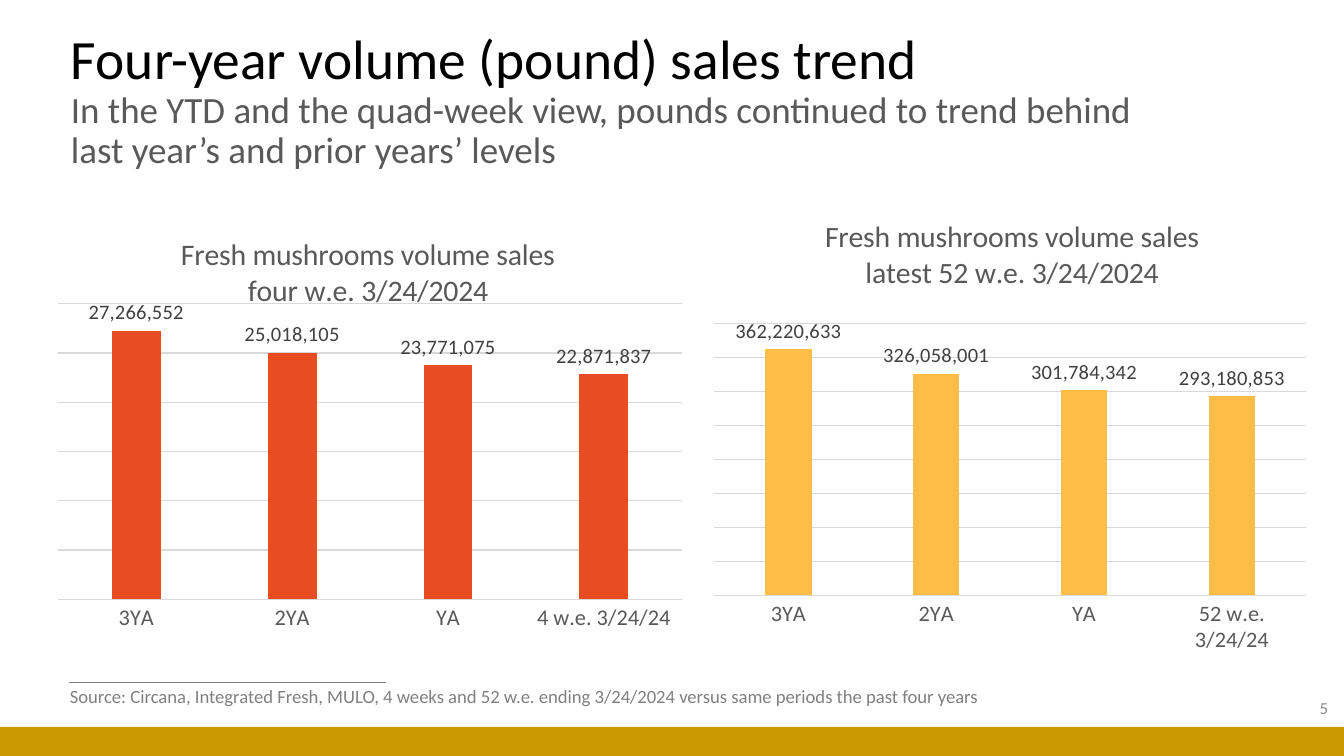
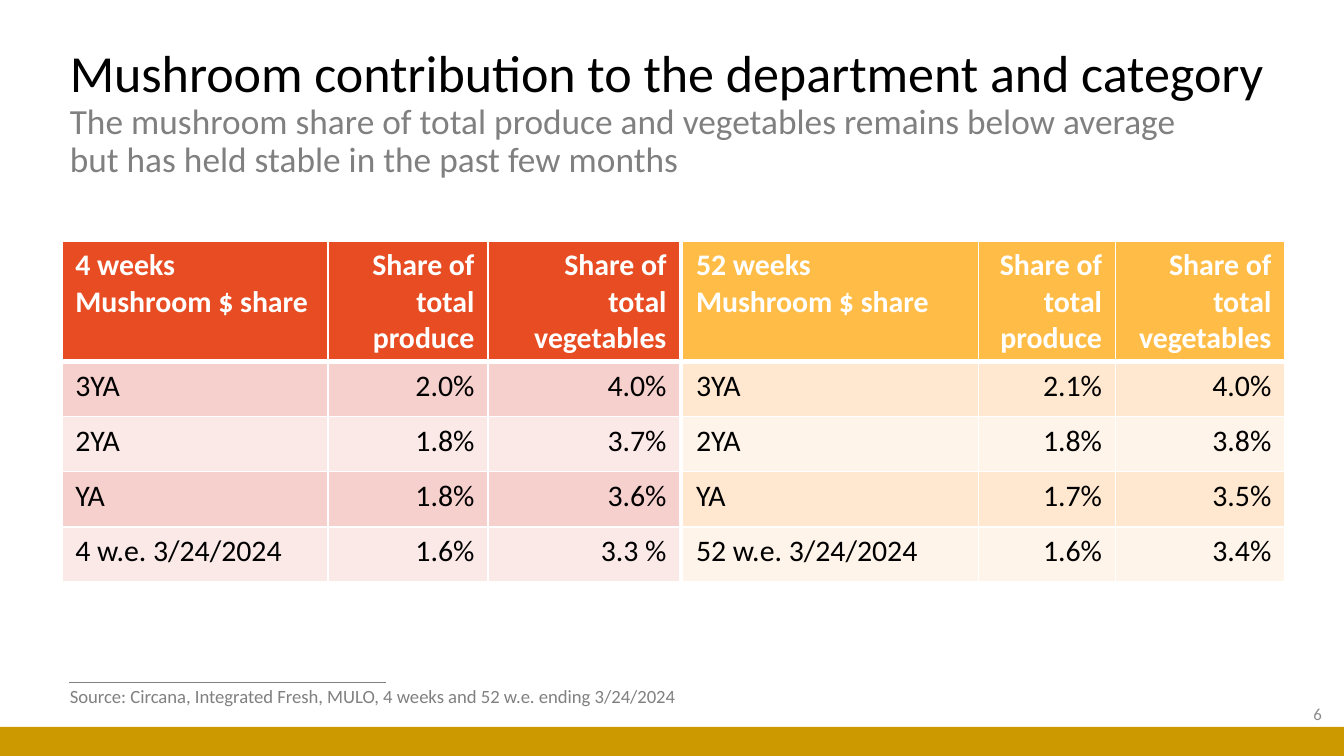
from lxml import etree
from pptx import Presentation
from pptx.chart.data import CategoryChartData as ChartData
from pptx.dml.color import RGBColor
from pptx.enum.chart import XL_CHART_TYPE as Kind, XL_LABEL_POSITION as Spot, XL_TICK_MARK as Tick
from pptx.enum.shapes import MSO_CONNECTOR as Link, MSO_SHAPE as Shape
from pptx.enum.text import MSO_ANCHOR as Anchor, MSO_AUTO_SIZE as Fit, PP_ALIGN as Align
from pptx.oxml.ns import qn
from pptx.util import Cm, Pt

FACE = "Calibri"
WHITE, BLACK, GRAY, DARK = "FFFFFF", "000000", "808080", "595959"
GOLD, GRID, FAINT, LABEL = "CC9900", "D9D9D9", "8C8C8C", "404040"
RED, AMBER = "E84C22", "FFBD47"


def rgb(code):
    return RGBColor.from_string(code)


def style(font, size, color, bold=False):
    font.name, font.size, font.bold = FACE, Pt(size), bold
    font.color.rgb = rgb(color)


def add_text(slide, box, text, size, color, wrap=True):
    """Add a one-paragraph text box and return its frame."""
    frame = slide.shapes.add_textbox(*map(Cm, box)).text_frame
    frame.word_wrap = wrap
    frame.text = text
    for run in frame.paragraphs[0].runs:
        style(run.font, size, color)
    return frame


def add_title(slide, box, head, sub, sizes, color):
    frame = add_text(slide, box, head + "\v" + sub, sizes[1], color)
    frame.vertical_anchor = Anchor.MIDDLE
    para = frame.paragraphs[0]
    para.line_spacing = 0.9
    style(para.runs[0].font, sizes[0], BLACK)


def add_frame(slide):
    """Add the source rule and the bottom band."""
    rule = slide.shapes.add_connector(Link.STRAIGHT, Cm(1.3), Cm(12.9), Cm(7.29), Cm(12.9))
    rule.line.color.rgb = rgb(GRAY)
    rule.line.width = Pt(0.5)
    etree.SubElement(rule._element.spPr, qn("a:effectLst"))
    band = slide.shapes.add_shape(Shape.RECTANGLE, 0, Cm(13.74), Cm(25.4), Cm(0.55))
    band.shadow.inherit = False
    band.fill.solid()
    band.fill.fore_color.rgb = rgb(GOLD)
    band.line.fill.background()


def add_notes(slide, source, width, number, spot):
    """Add the source line and the page number."""
    frame = add_text(slide, (1.07, 12.83, width, 0.69), source, 10, GRAY, wrap=False)
    frame.auto_size = Fit.SHAPE_TO_FIT_TEXT
    frame = add_text(slide, (*spot, 5.72, 0.76), number, 9, FAINT)
    frame.vertical_anchor = Anchor.MIDDLE
    frame.paragraphs[0].alignment = Align.RIGHT


def place(parent, index, **parts):
    """Give a chart part a manual layout."""
    old = parent.find(qn("c:layout"))
    if old is not None:
        parent.remove(old)
    layout = etree.Element(qn("c:layout"))
    manual = etree.SubElement(layout, qn("c:manualLayout"))
    for name, value in parts.items():
        etree.SubElement(manual, qn("c:" + name)).set("val", str(value))
    parent.insert(index, layout)


def set_axes(chart, top, step):
    cat, val = chart.category_axis, chart.value_axis
    cat.major_tick_mark = cat.minor_tick_mark = Tick.NONE
    style(cat.tick_labels.font, 12, DARK)
    val.minimum_scale, val.maximum_scale, val.major_unit = 0, top, step
    val.has_major_gridlines = True
    for line in (cat.format.line, val.major_gridlines.format.line):
        line.color.rgb = rgb(GRID)
        line.width = Pt(0.75)
    val.visible = False


def add_bars(slide, left, width, title, spot, plot, last, values, color, scale):
    data = ChartData(number_format="#,##0")
    data.categories = ["3YA", "2YA", "YA", last]
    data.add_series("Series 1", values)
    chart = slide.shapes.add_chart(
        Kind.COLUMN_CLUSTERED, Cm(left), Cm(3.94), Cm(width), Cm(8.41), data).chart
    style(chart.font, 10, BLACK)
    chart.has_legend = False
    chart.has_title = True
    frame = chart.chart_title.text_frame
    frame.text = title
    for para in frame.paragraphs:
        style(para.runs[0].font, 16, DARK)
    place(chart.chart_title._element, 1, xMode="edge", yMode="edge", x=spot[0], y=spot[1])
    place(chart._chartSpace.chart.plotArea, 0, layoutTarget="inner", xMode="edge",
          yMode="edge", x=0, y=plot[0], w=1, h=plot[1])
    set_axes(chart, *scale)
    bars = chart.plots[0]
    bars.gap_width, bars.overlap, bars.vary_by_categories = 219, -27, False
    fill = bars.series[0].format.fill
    fill.solid()
    fill.fore_color.rgb = rgb(color)
    bars.has_data_labels = True
    labels = bars.data_labels
    labels.show_value = True
    labels.position = Spot.OUTSIDE_END
    labels.number_format, labels.number_format_is_linked = "#,##0", False
    style(labels.font, 11, LABEL)


def set_edges(cell, top, bottom):
    """Draw white cell borders, with widths in points."""
    props = cell._tc.get_or_add_tcPr()
    for side, width in zip("LRTB", (1, 1, top, bottom)):
        line = etree.SubElement(props, qn("a:ln" + side), w=str(Pt(width)))
        fill = etree.SubElement(line, qn("a:solidFill"))
        etree.SubElement(fill, qn("a:srgbClr"), val=WHITE)


def add_grid(slide, left, widths, period, last, shares, fills):
    """Add a share table; fills are header, odd row and even row."""
    rows = [(period + "\vMushroom $ share", "Share of total produce", "Share of total vegetables")]
    rows += [(name, *pair) for name, pair in zip(("3YA", "2YA", "YA", last), shares)]
    high = Cm(1.04)
    table = slide.shapes.add_table(
        len(rows), len(widths), Cm(left), Cm(4.55), Cm(sum(widths)), high * len(rows)).table
    for col, width in zip(table.columns, widths):
        col.width = Cm(width)
    for r, row in enumerate(rows):
        table.rows[r].height = high
        fill = fills[0] if r == 0 else fills[2 - r % 2]
        for c, text in enumerate(row):
            cell = table.cell(r, c)
            set_edges(cell, 3 if r == 1 else 1, 3 if r == 0 else 1)
            cell.fill.solid()
            cell.fill.fore_color.rgb = rgb(fill)
            cell.text = text
            para = cell.text_frame.paragraphs[0]
            para.alignment = Align.RIGHT if c else Align.LEFT
            for run in para.runs:
                style(run.font, 16, BLACK if r else WHITE, bold=r == 0)


def add_trend(slide):
    add_frame(slide)
    add_title(slide, (1.09, 0.91, 21.21, 2.01), "Four-year volume (pound) sales trend",
              "In the YTD and the quad-week view, pounds continued to trend behind "
              "last year’s and prior years’ levels", (29.7, 19.8), DARK)
    add_notes(slide, "Source: Circana, Integrated Fresh, MULO, 4 weeks and 52 w.e. ending "
              "3/24/2024 versus same periods the past four years", 18.03, "5", (19.63, 13))
    add_bars(slide, 1.09, 11.81, "Fresh mushrooms volume sales\nfour w.e. 3/24/2024",
             (0.19, 0.05), (0.214, 0.665), "4 w.e. 3/24/24",
             (27266552, 25018105, 23771075, 22871837), RED, (30e6, 5e6))
    add_bars(slide, 13.49, 11.2, "Fresh mushrooms volume sales\nlatest 52 w.e. 3/24/2024",
             (0.18, 0.01), (0.261, 0.619), "52 w.e. 3/24/24",
             (362220633, 326058001, 301784342, 293180853), AMBER, (400e6, 50e6))


def add_share(slide):
    add_frame(slide)
    add_title(slide, (1.07, 1.47, 24.33, 1.37),
              "Mushroom contribution to the department and category",
              "The mushroom share of total produce and vegetables remains below average "
              "\vbut has held stable in the past few months", (27.9, 18.9), GRAY)
    add_grid(slide, 1.17, (5.03, 3.02, 3.63), "4 weeks", "4 w.e. 3/24/2024",
             (("2.0%", "4.0%"), ("1.8%", "3.7%"), ("1.8%", "3.6%"), ("1.6%", "3.3 %")),
             (RED, "F6D0CD", "FBE9E8"))
    add_notes(slide, "Source: Circana, Integrated Fresh, MULO, 4 weeks and 52 w.e. ending "
              "3/24/2024", 12.4, "6", (19.51, 13.11))
    add_grid(slide, 12.9, (5.59, 2.59, 3.2), "52 weeks", "52 w.e. 3/24/2024",
             (("2.1%", "4.0%"), ("1.8%", "3.8%"), ("1.7%", "3.5%"), ("1.6%", "3.4%")),
             (AMBER, "FFE8CF", "FFF4E9"))


def main():
    deck = Presentation()
    deck.slide_width, deck.slide_height = Cm(25.4), Cm(14.29)
    for build in (add_trend, add_share):
        build(deck.slides.add_slide(deck.slide_layouts[6]))
    deck.save("out.pptx")


if __name__ == "__main__":
    main()
